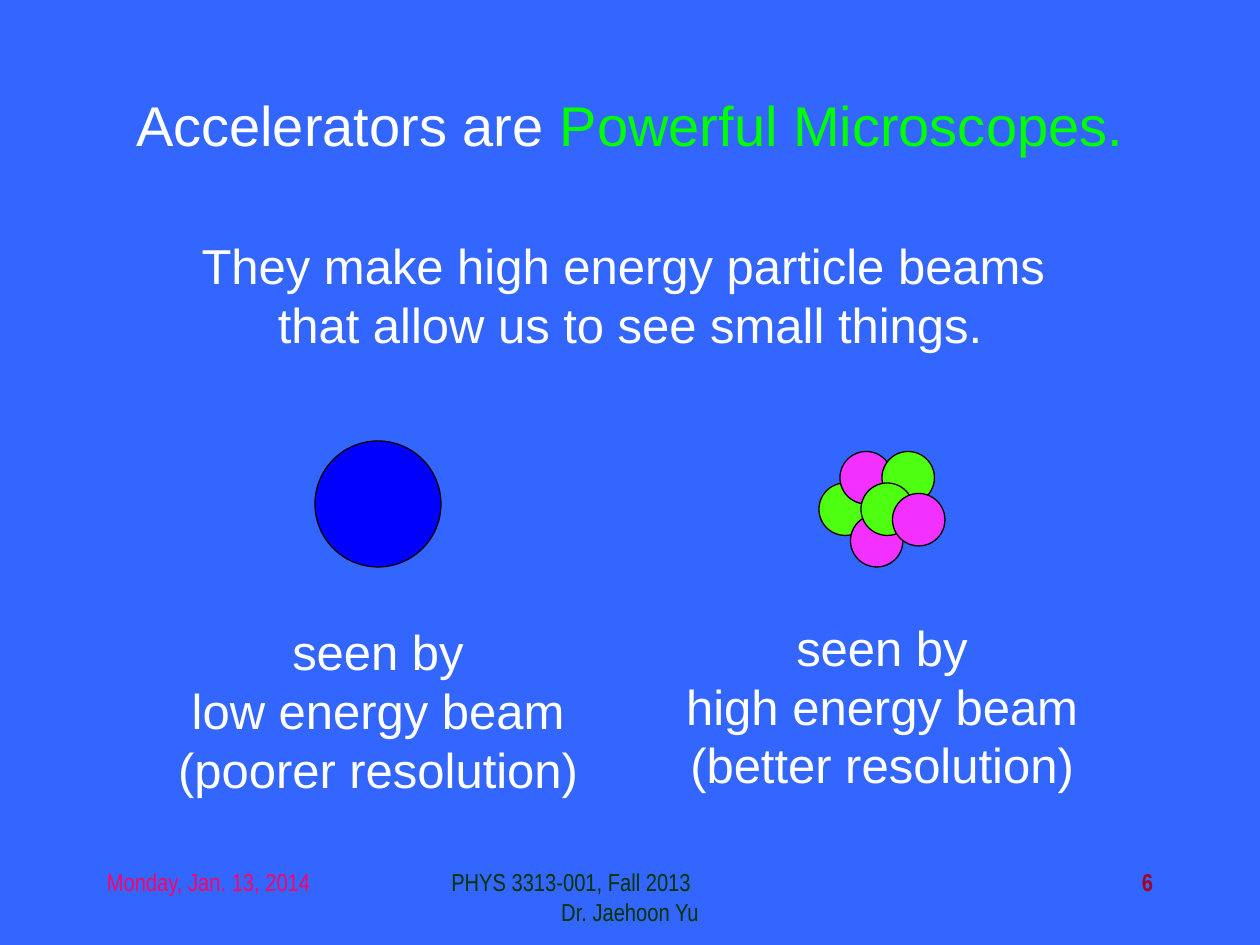
from pptx import Presentation
from pptx.dml.color import RGBColor
from pptx.enum.shapes import MSO_SHAPE
from pptx.enum.text import MSO_ANCHOR, MSO_AUTO_SIZE, PP_ALIGN
from pptx.oxml.xmlchemy import OxmlElement
from pptx.util import Emu, Pt

EMU_PER_PX = 7620
WHITE, BLACK = "FFFFFF", "000000"
LIME, GREEN, MAGENTA = "00FF00", "4EFF11", "F230FF"
NUCLEON_SIZE = 50
NUCLEONS = [
    (780, 460, GREEN),
    (800, 430, MAGENTA),
    (810, 490, MAGENTA),
    (840, 430, GREEN),
    (820, 460, GREEN),
    (850, 470, MAGENTA),
]
CAPTIONS = [
    (620, 582, ["seen by", "high energy beam", "(better resolution)"]),
    (140, 586, ["seen by", "low energy beam", "(poorer resolution)"]),
]


def px(length):
    """Turn a length in px into EMU."""
    return Emu(length * EMU_PER_PX)


def color(hex_code):
    """Turn a hex string into a colour."""
    return RGBColor.from_string(hex_code)


def write_text(shape, lines, size, font="Arial", align=PP_ALIGN.CENTER, bold=False):
    """Fill a shape with lines, each a list of (text, colour) runs."""
    frame = shape.text_frame
    frame.word_wrap = True
    frame.auto_size = MSO_AUTO_SIZE.NONE
    frame.vertical_anchor = MSO_ANCHOR.TOP
    for index, line in enumerate(lines):
        paragraph = frame.add_paragraph() if index else frame.paragraphs[0]
        paragraph.alignment = align
        paragraph.space_before = Pt(0)
        for text, hex_code in line:
            run = paragraph.add_run()
            run.text = text
            run.font.name = font
            run.font.size = Pt(size)
            run.font.bold = bold
            run.font.color.rgb = color(hex_code)


def place(shape, left, top, width, height):
    """Move and size a placeholder."""
    shape.left, shape.top = px(left), px(top)
    shape.width, shape.height = px(width), px(height)


def remove_bullets(shape):
    """Clear the bullets and indents of a body placeholder."""
    for paragraph in shape.text_frame.paragraphs:
        properties = paragraph._p.get_or_add_pPr()
        properties.set("marL", "0")
        properties.set("indent", "0")
        properties.append(OxmlElement("a:buNone"))


def add_text(slide, left, top, width, height, lines, size, **style):
    """Add a text box and return it."""
    box = slide.shapes.add_textbox(px(left), px(top), px(width), px(height))
    write_text(box, lines, size, **style)
    return box


def add_circle(shapes, left, top, diameter, fill):
    """Add an outlined circle."""
    circle = shapes.add_shape(
        MSO_SHAPE.OVAL, px(left), px(top), px(diameter), px(diameter)
    )
    circle.shadow.inherit = False
    circle.fill.solid()
    circle.fill.fore_color.rgb = color(fill)
    circle.line.color.rgb = color(BLACK)
    circle.line.width = Pt(0.75)


def add_footer(slide):
    """Add the date, course and page number."""
    style = {"size": 14, "font": "Arial Narrow"}
    add_text(slide, 90, 820, 250, 60, [[("Monday, Jan. 13, 2014", "FF0066")]],
             align=PP_ALIGN.LEFT, **style)
    course = add_text(slide, 410, 820, 380, 60, [
        [("PHYS 3313-001, Fall 2013", "003300")],
        [("Dr. Jaehoon Yu", "003300")],
    ], **style)
    first_line = course.text_frame.paragraphs[0]
    first_line.alignment = PP_ALIGN.LEFT
    first_line._p.get_or_add_pPr().set("marL", str(px(8)))
    add_text(slide, 860, 820, 250, 60, [[("6", "A50021")]],
             align=PP_ALIGN.RIGHT, bold=True, **style)


def main():
    """Build the slide and save it."""
    presentation = Presentation()
    presentation.slide_width, presentation.slide_height = px(1200), px(900)
    slide = presentation.slides.add_slide(presentation.slide_layouts[1])
    slide.background.fill.solid()
    slide.background.fill.fore_color.rgb = color("3366FF")

    title, body = slide.shapes.title, slide.placeholders[1]
    place(title, 0, 80, 1200, 75)
    write_text(title, [[("Accelerators are ", WHITE), ("Powerful Microscopes.", LIME)]], 32)
    place(body, 0, 218, 1200, 124)
    write_text(body, [
        [("They make high energy particle beams ", WHITE)],
        [("that allow us to see small things.", WHITE)],
    ], 28)
    remove_bullets(body)

    add_circle(slide.shapes, 300, 420, 120, "0000FF")
    nucleus = slide.shapes.add_group_shape()
    for left, top, fill in NUCLEONS:
        add_circle(nucleus.shapes, left, top, NUCLEON_SIZE, fill)
    for left, top, lines in CAPTIONS:
        add_text(slide, left, top, 440, 180, [[(line, WHITE)] for line in lines], 28)
    add_footer(slide)
    presentation.save("out.pptx")


if __name__ == "__main__":
    main()
